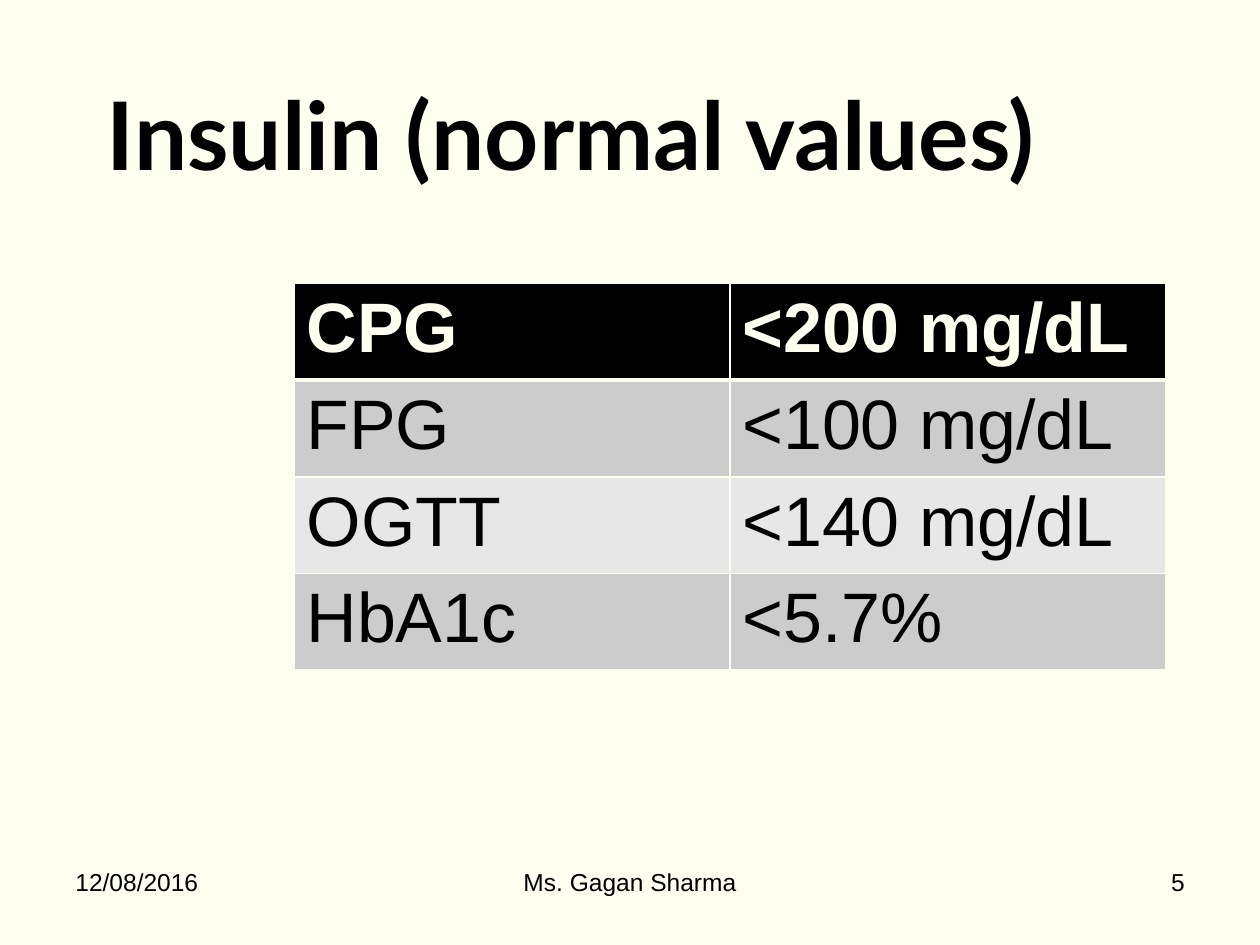
import pptx
import pptx.dml.color
import pptx.enum.text
import pptx.oxml
import pptx.oxml.ns
import pptx.util

RGBColor = pptx.dml.color.RGBColor
ALIGN = pptx.enum.text.PP_ALIGN
ANCHOR = pptx.enum.text.MSO_ANCHOR

IVORY = RGBColor(0xFF, 0xFF, 0xF0)
BLACK = RGBColor(0x00, 0x00, 0x00)
GREY = RGBColor(0xCC, 0xCC, 0xCC)
LIGHT_GREY = RGBColor(0xE7, 0xE7, 0xE7)

COLUMNS, ROWS = 120, 90  # square grid, twelve units to the inch

NORMAL_VALUES = [
    ("CPG", "<200 mg/dL"),
    ("FPG", "<100 mg/dL"),
    ("OGTT", "<140 mg/dL"),
    ("HbA1c", "<5.7%"),
]


class SlideBuilder:
    """Holds the style and the current slide; lengths are grid units."""

    title_font, body_font = "Lato", "Arial"

    def __init__(self, deck):
        self.unit = deck.slide_width / COLUMNS
        self.page = deck.slides.add_slide(deck.slide_layouts[6])
        self.page.background.fill.solid()
        self.page.background.fill.fore_color.rgb = IVORY

    def place(self, *lengths):
        return [round(length * self.unit) for length in lengths]

    def set_text(self, frame, text, size, font, color=BLACK, bold=False, align=ALIGN.LEFT):
        frame.text = text
        para = frame.paragraphs[0]
        para.alignment = align
        span = para.runs[0]
        span.font.name, span.font.size, span.font.bold = font, pptx.util.Pt(size), bold
        span.font.color.rgb = color

    def text(self, area, text, size, font, anchor=ANCHOR.TOP, **style):
        box = self.page.shapes.add_textbox(*self.place(*area))
        box.text_frame.word_wrap = True
        box.text_frame.vertical_anchor = anchor
        self.set_text(box.text_frame, text, size, font, **style)

    def title(self, area, text):
        self.text(area, text, 54, self.title_font, ANCHOR.BOTTOM, bold=True)

    def footer(self, left, width, text, align):
        self.text((left, 82, width, 6.2), text, 14, self.body_font, align=align)

    def border(self, cell, widths):
        properties = cell._tc.get_or_add_tcPr()
        for index, (side, points) in enumerate(widths.items()):
            line = pptx.oxml.parse_xml(
                f'<a:ln{side} {pptx.oxml.ns.nsdecls("a")} w="{pptx.util.Pt(points)}">'
                f'<a:solidFill><a:srgbClr val="{IVORY}"/></a:solidFill></a:ln{side}>'
            )
            properties.insert(index, line)

    def table(self, area, values):
        frame = self.page.shapes.add_table(len(values), len(values[0]), *self.place(*area))
        table = frame.table
        table.horz_banding = False
        for row, texts in enumerate(values):
            header = row == 0
            fill = BLACK if header else (GREY if row % 2 else LIGHT_GREY)
            widths = {"L": 1, "R": 1, "T": 3 if row == 1 else 1, "B": 3 if header else 1}
            for column, text in enumerate(texts):
                cell = table.cell(row, column)
                cell.fill.solid()
                cell.fill.fore_color.rgb = fill
                self.border(cell, widths)
                self.set_text(cell.text_frame, text, 40, self.body_font,
                              color=IVORY if header else BLACK, bold=header)


def main():
    deck = pptx.Presentation()
    deck.slide_width = pptx.util.Inches(10)
    deck.slide_height = round(deck.slide_width * ROWS / COLUMNS)
    slide = SlideBuilder(deck)

    # Heading and table of normal values
    slide.title((9, 3.6, 109.3, 15), "Insulin (normal values)")
    slide.table((28, 27, 83, 34.5), NORMAL_VALUES)

    # Footer: date, author, page number
    slide.footer(6, 28, "12/08/2016", ALIGN.LEFT)
    slide.footer(41, 38, "Ms. Gagan Sharma", ALIGN.CENTER)
    slide.footer(86, 28, "5", ALIGN.RIGHT)

    deck.save("out.pptx")


if __name__ == "__main__":
    main()
